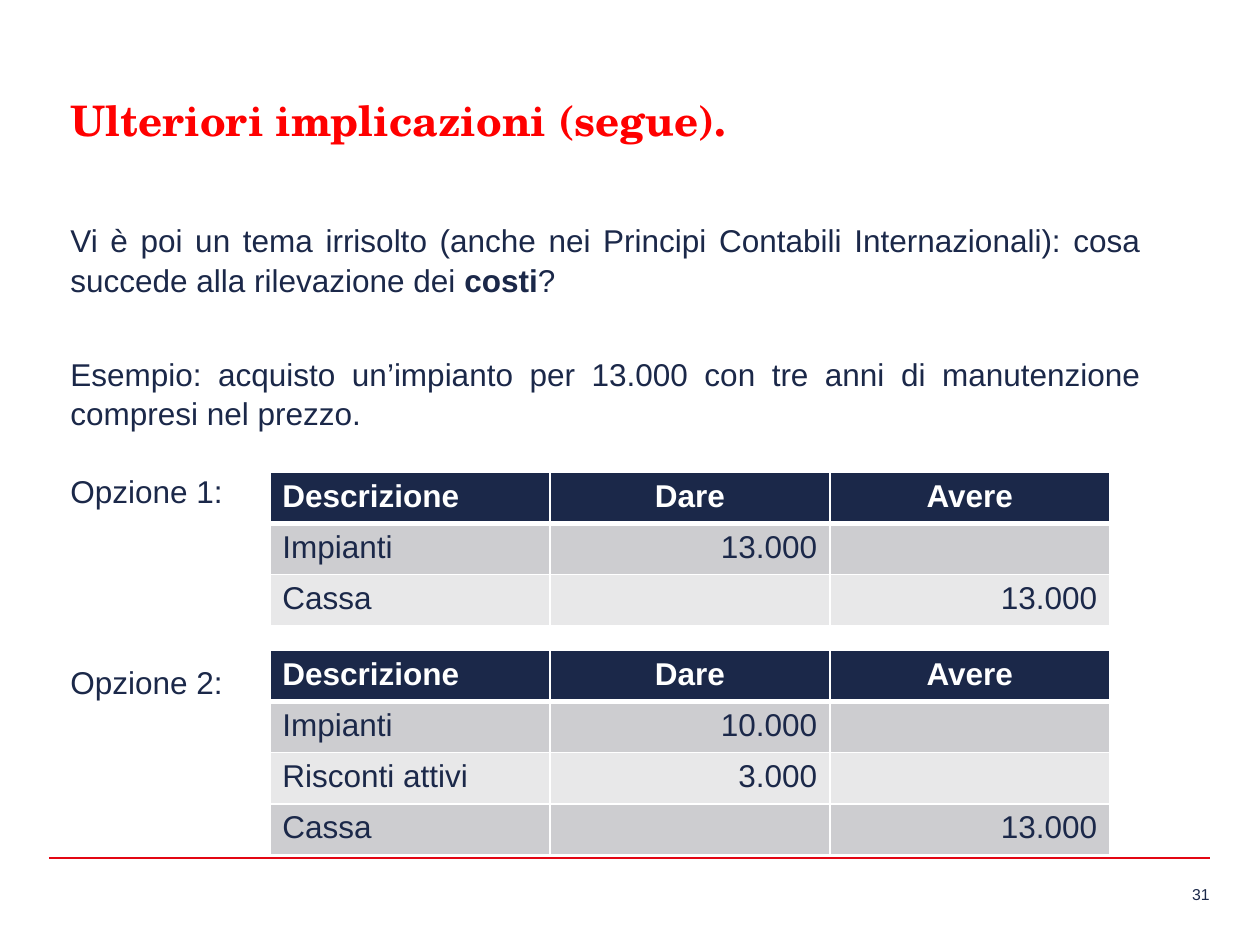
from lxml import etree
from pptx import Presentation
from pptx.dml.color import RGBColor
from pptx.enum import shapes, text
from pptx.oxml.ns import qn
from pptx.util import Pt

# Content
TITLE = "Ulteriori implicazioni (segue)."
PAGE = "31"
# Body paragraphs: space before, then (words, bold) runs
BODY = [
    (0, [("Vi è poi un tema irrisolto (anche nei Principi Contabili Internazionali): "
          "cosa succede alla rilevazione dei ", False), ("costi", True), ("?", False)]),
    (31, [("Esempio: acquisto un’impianto per 13.000 con tre anni di manutenzione "
           "compresi nel prezzo.", False)]),
    (21.7, [("Opzione 1:", False)]),
    (86.6, [("Opzione 2:", False)]),
]
HEAD = ("Descrizione", "Dare", "Avere")
# Tables: top, then entries
TABLES = [
    (270, [("Impianti", "13.000", ""), ("Cassa", "", "13.000")]),
    (371.7, [("Impianti", "10.000", ""), ("Risconti attivi", "3.000", ""),
             ("Cassa", "", "13.000")]),
]
COLORS = {"navy": "1B2849", "red": "FF0000", "rule": "E30613", "white": "FFFFFF",
          "dark": "CDCDD0", "light": "E8E8E9"}
LEFT, COL, ROW = 154.2, 160, 29.2
AL = text.PP_ALIGN


def rgb(name):
    return RGBColor.from_string(COLORS[name])


def style(par, size, color, align=AL.LEFT, bold=None, face="Arial"):
    par.alignment = align
    font = par.font
    font.name, font.size, font.bold = face, Pt(size), bold
    font.color.rgb = rgb(color)


def add_box(slide, x, y, w, h, inset=True):
    frame = slide.shapes.add_textbox(Pt(x), Pt(y), Pt(w), Pt(h)).text_frame
    frame.word_wrap = True
    if not inset:
        frame.margin_left = frame.margin_right = 0
        frame.margin_top = frame.margin_bottom = 0
    return frame


def add_edges(cell, head):
    props = cell._tc.get_or_add_tcPr()
    for side in "LRTB":
        width = 3 if head and side == "B" else 1
        line = etree.SubElement(props, qn("a:ln" + side), w=str(Pt(width)))
        fill = etree.SubElement(line, qn("a:solidFill"))
        etree.SubElement(fill, qn("a:srgbClr"), val=COLORS["white"])


def add_ledger(slide, top, entries):
    rows = [HEAD] + entries
    table = slide.shapes.add_table(len(rows), len(HEAD), Pt(LEFT), Pt(top),
                                   Pt(COL * len(HEAD)), Pt(ROW * len(rows))).table
    for col in table.columns:
        col.width = Pt(COL)
    for r, row in enumerate(rows):
        table.rows[r].height = Pt(ROW)
        head = r == 0
        shade = "navy" if head else ("light", "dark")[r % 2]
        for c, words in enumerate(row):
            cell = table.cell(r, c)
            add_edges(cell, head)
            cell.fill.solid()
            cell.fill.fore_color.rgb = rgb(shade)
            cell.text = words
            align = AL.LEFT if c == 0 else AL.CENTER if head else AL.RIGHT
            style(cell.text_frame.paragraphs[0], 18, "white" if head else "navy",
                  align, head)


def main():
    deck = Presentation()
    deck.slide_width, deck.slide_height = Pt(720), Pt(540)
    slide = deck.slides.add_slide(deck.slide_layouts[6])

    # Page number and footer rule
    par = add_box(slide, 641.5, 505.4, 49.7, 10.8, False).paragraphs[0]
    par.text = PAGE
    style(par, 9, "navy", AL.RIGHT)
    rule = slide.shapes.add_connector(shapes.MSO_CONNECTOR.STRAIGHT,
                                      Pt(28), Pt(490.3), Pt(691.2), Pt(490.3))
    rule.line.color.rgb = rgb("rule")
    rule.line.width = Pt(1)
    etree.SubElement(rule._element.spPr, qn("a:effectLst"))

    # Title
    par = add_box(slide, 33.1, 50.4, 666.7, 36).paragraphs[0]
    par.text = TITLE
    style(par, 24, "red", bold=True, face="TeX Gyre Schola")

    # Body text
    frame = add_box(slide, 33.1, 121.7, 625.7, 278.6)
    for i, (gap, runs) in enumerate(BODY):
        par = frame.add_paragraph() if i else frame.paragraphs[0]
        par.line_spacing = 1.05
        par.space_before = Pt(gap)
        style(par, 18, "navy", AL.JUSTIFY)
        for words, bold in runs:
            run = par.add_run()
            run.text = words
            if bold:
                run.font.bold = True

    # Ledger tables
    for top, entries in TABLES:
        add_ledger(slide, top, entries)

    deck.save("out.pptx")


if __name__ == "__main__":
    main()
